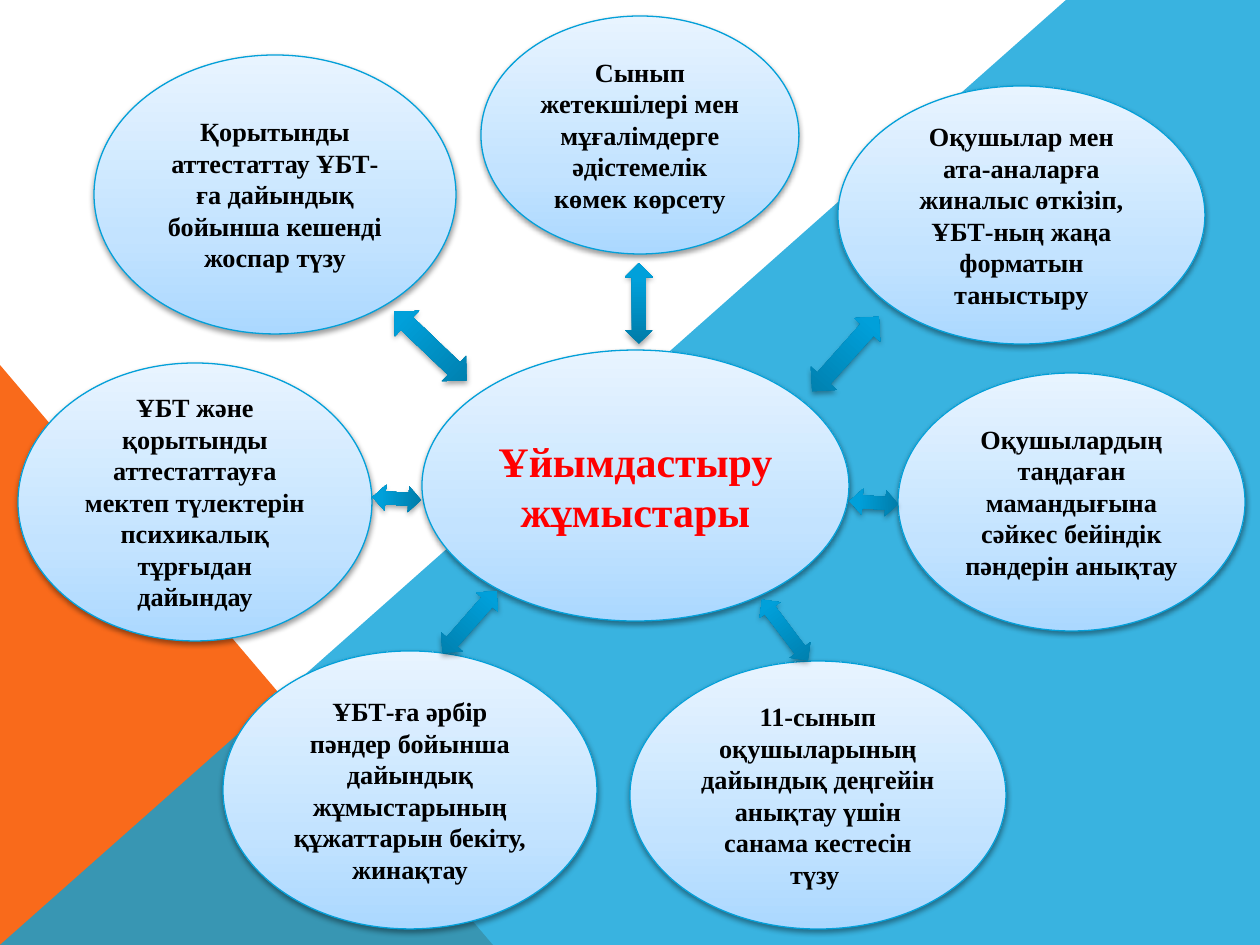
import dataclasses

import lxml.etree
import pptx
import pptx.dml.color
import pptx.enum.shapes
import pptx.enum.text
import pptx.oxml.ns
import pptx.util

EMU_PER_PX = 914400 / 126
FONT = "Times New Roman"
SHAPES = pptx.enum.shapes.MSO_SHAPE
BUBBLE_STOPS = ((0, "ABD8FF"), (35, "C3E3FF"), (100, "E8F4FF"))
ARROW_STOPS = ((0, "007BA8"), (80, "00A0DA"), (100, "00A0DB"))


@dataclasses.dataclass
class Bubble:
    left: int
    top: int
    width: int
    height: int
    text: str
    size: int = 15
    color: str = "000000"


@dataclasses.dataclass
class Arrow:
    left: int
    top: int
    width: int
    height: int
    rotation: float = 0


BUBBLES = [
    Bubble(422, 350, 427, 271, "Ұйымдастыру жұмыстары", 24, "FF0000"),
    Bubble(94, 55, 362, 279, "Қорытынды аттестаттау ҰБТ-ға дайындық бойынша кешенді жоспар түзу"),
    Bubble(481, 16, 318, 238, "Сынып жетекшілері мен мұғалімдерге әдістемелік көмек көрсету"),
    Bubble(838, 86, 367, 258,
           "Оқушылар мен ата-аналарға жиналыс өткізіп, ҰБТ-ның жаңа форматын таныстыру"),
    Bubble(223, 651, 374, 278,
           "ҰБТ-ға әрбір пәндер бойынша дайындық жұмыстарының құжаттарын бекіту, жинақтау"),
    Bubble(630, 661, 376, 268,
           "11-сынып оқушыларының дайындық деңгейін анықтау үшін санама кестесін түзу "),
    Bubble(898, 373, 347, 258,
           "Оқушылардың таңдаған мамандығына сәйкес бейіндік пәндерін анықтау"),
    Bubble(18, 363, 354, 278,
           "ҰБТ және қорытынды аттестаттауға мектеп түлектерін психикалық тұрғыдан дайындау"),
]
ARROWS = [
    Arrow(413, 296, 35, 100, 313.7),
    Arrow(772, 592, 26, 76, 322.9),
    Arrow(455, 581, 29, 82, 41.3),
    Arrow(384, 474, 26, 49, 273.5),
    Arrow(828, 304, 35, 100, 41.8),
    Arrow(625, 263, 28, 81),
    Arrow(861, 478, 26, 49, 273.5),
]


def px(length: int) -> int:
    return round(length * EMU_PER_PX)


def rgb(value: str) -> pptx.dml.color.RGBColor:
    return pptx.dml.color.RGBColor.from_string(value)


def add_child(parent, tag: str, **attributes):
    child = lxml.etree.SubElement(parent, pptx.oxml.ns.qn(tag))
    for name, value in attributes.items():
        child.set(name, str(value))
    return child


def find_part(shape, tag: str):
    return shape._element.spPr.find(".//" + pptx.oxml.ns.qn(tag))


def add_preset(slide, kind, left: int, top: int, width: int, height: int):
    shape = slide.shapes.add_shape(kind, px(left), px(top), px(width), px(height))
    shape.shadow.inherit = False
    shape.line.fill.background()
    return shape


def fill_gradient(shape, stops) -> None:
    """Fill from the bottom of the shape upwards."""
    shape.fill.gradient()
    shape.fill.gradient_angle = 90
    stop_list = find_part(shape, "a:gsLst")
    for old_stop in list(stop_list):
        stop_list.remove(old_stop)
    for percent, color in stops:
        stop = add_child(stop_list, "a:gs", pos=percent * 1000)
        add_child(stop, "a:srgbClr", val=color)


def add_shadow(shape, distance: float, opacity: int) -> None:
    shadow = add_child(find_part(shape, "a:effectLst"), "a:outerShdw",
                       blurRad=pptx.util.Pt(3.1), dist=pptx.util.Pt(distance),
                       dir=90 * 60000, rotWithShape=0)
    color = add_child(shadow, "a:srgbClr", val="000000")
    add_child(color, "a:alpha", val=opacity * 1000)


def draw_background(slide) -> None:
    triangle = add_preset(slide, SHAPES.RIGHT_TRIANGLE, 0, 365, 493, 580)
    triangle.fill.solid()
    triangle.fill.fore_color.rgb = rgb("F96A1B")

    builder = slide.shapes.build_freeform(0, 945, scale=EMU_PER_PX)
    builder.add_line_segments([(1066, 0), (1260, 0), (1260, 945)], close=True)
    wedge = builder.convert_to_shape()
    wedge.shadow.inherit = False
    wedge.line.fill.background()
    wedge.fill.solid()
    wedge.fill.fore_color.rgb = rgb("08A1D9")
    add_child(find_part(wedge, "a:srgbClr"), "a:alpha", val=80000)


def draw_bubble(slide, bubble: Bubble) -> None:
    shape = add_preset(slide, SHAPES.OVAL, bubble.left, bubble.top, bubble.width, bubble.height)
    fill_gradient(shape, BUBBLE_STOPS)
    shape.line.color.rgb = rgb("03A0D9")
    shape.line.width = pptx.util.Pt(0.75)
    add_shadow(shape, 1.6, 38)
    frame = shape.text_frame
    frame.text = bubble.text
    frame.word_wrap = True
    frame.vertical_anchor = pptx.enum.text.MSO_ANCHOR.MIDDLE
    para = frame.paragraphs[0]
    para.alignment = pptx.enum.text.PP_ALIGN.CENTER
    font = para.runs[0].font
    font.name = FONT
    font.size = pptx.util.Pt(bubble.size)
    font.bold = True
    font.color.rgb = rgb(bubble.color)


def draw_arrow(slide, arrow: Arrow) -> None:
    shape = add_preset(slide, SHAPES.UP_DOWN_ARROW,
                       arrow.left, arrow.top, arrow.width, arrow.height)
    shape.rotation = arrow.rotation
    fill_gradient(shape, ARROW_STOPS)
    add_shadow(shape, 1.8, 35)


def main() -> None:
    deck = pptx.Presentation()
    deck.slide_width, deck.slide_height = px(1260), px(945)
    slide = deck.slides.add_slide(deck.slide_layouts[6])
    draw_background(slide)
    for bubble in BUBBLES:
        draw_bubble(slide, bubble)
    for arrow in ARROWS:
        draw_arrow(slide, arrow)
    deck.save("out.pptx")


if __name__ == "__main__":
    main()
